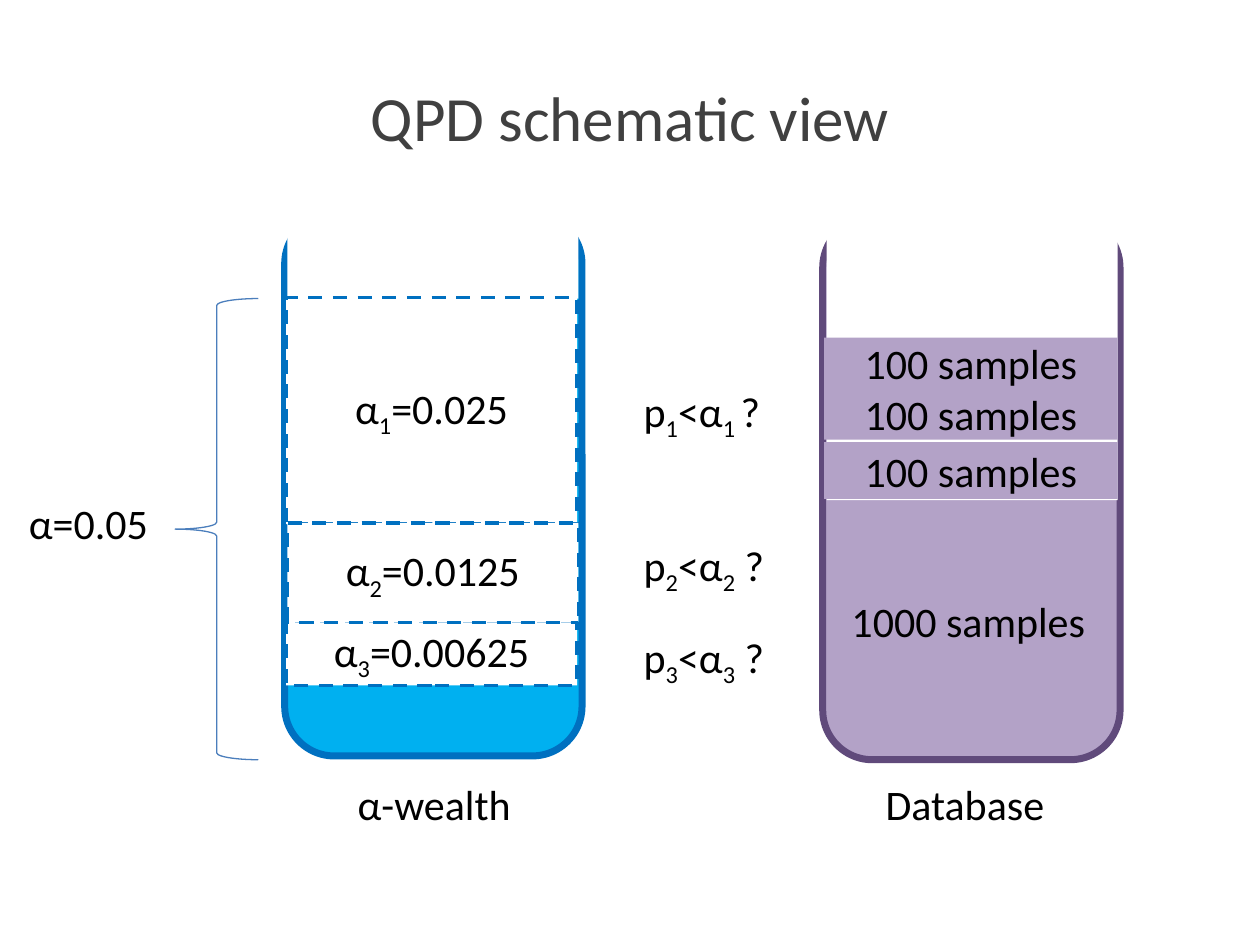
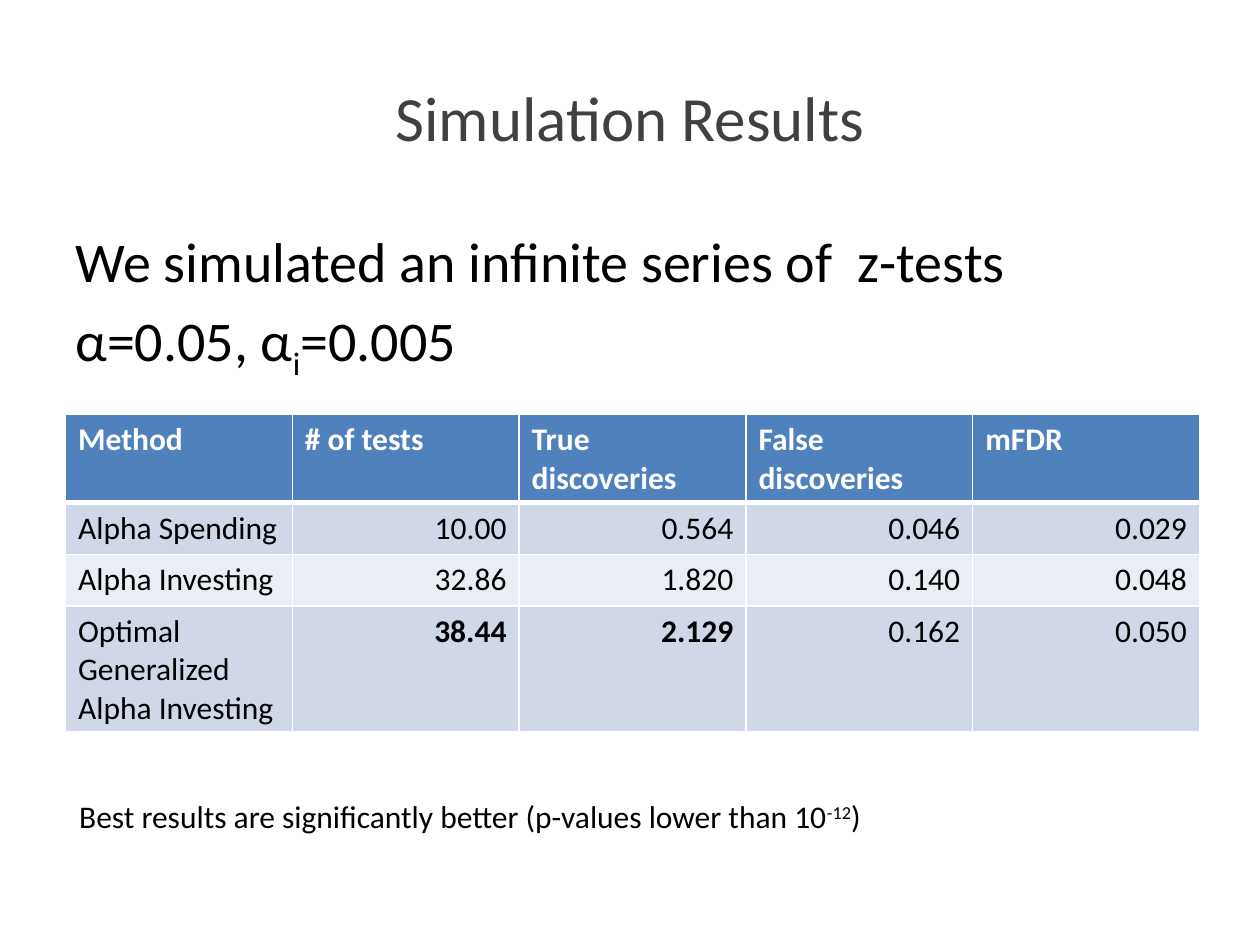
import dataclasses

import lxml.etree
import pptx
import pptx.dml.color
import pptx.enum.dml
import pptx.enum.shapes
import pptx.enum.text
import pptx.oxml.ns
import pptx.util

PX = 9144  # EMU per px: 100 px to the inch
SHAPES = pptx.enum.shapes.MSO_SHAPE
ALIGN = pptx.enum.text.PP_ALIGN
ANCHOR = pptx.enum.text.MSO_ANCHOR
AUTO_SIZE = pptx.enum.text.MSO_AUTO_SIZE
RGB = pptx.dml.color.RGBColor.from_string


@dataclasses.dataclass(frozen=True)
class Theme:
    font: str = "Calibri"
    title_size: int = 36
    body_size: int = 32
    label_size: int = 24
    table_size: int = 18
    title: str = "404040"
    text: str = "000000"
    white: str = "FFFFFF"
    wealth: str = "00B0F0"
    wealth_edge: str = "0070C0"
    brace: str = "4B7EBC"
    database: str = "B3A2C7"
    database_edge: str = "604A7B"
    header: str = "4F81BD"
    bands: tuple = ("D0D8E8", "E9EDF4")


THEME = Theme()


def write_text(paragraph, text, size, color=THEME.text, bold=False, align=ALIGN.LEFT, shift=-25):
    """Write text whose every second part between bars is a sub- or superscript."""
    paragraph.alignment = align
    font_format = {"name": THEME.font, "size": pptx.util.Pt(size), "bold": bold}
    for index, part in enumerate(text.split("|")):
        run = paragraph.add_run()
        run.text = part
        for name, value in font_format.items():
            setattr(run.font, name, value)
        run.font.color.rgb = RGB(color)
        if index % 2:
            run._r.get_or_add_rPr().set("baseline", str(shift * 1000))


def add_shape(slide, kind, box, fill=None, edge=None, width=1, dash=None, text=None):
    shape = slide.shapes.add_shape(kind, *(length * PX for length in box))
    shape.shadow.inherit = False
    if fill:
        shape.fill.solid()
        shape.fill.fore_color.rgb = RGB(fill)
    else:
        shape.fill.background()
    if edge:
        shape.line.color.rgb = RGB(edge)
        shape.line.width = pptx.util.Pt(width)
        shape.line.dash_style = dash
    else:
        shape.line.fill.background()
    if text:
        shape.text_frame.vertical_anchor = ANCHOR.MIDDLE
        write_text(shape.text_frame.paragraphs[0], text, THEME.label_size, align=ALIGN.CENTER)


presentation = pptx.Presentation()
presentation.slide_width = 1000 * PX
presentation.slide_height = 750 * PX

slides = []
for title in ("QPD schematic view", "Simulation Results"):
    slide = presentation.slides.add_slide(presentation.slide_layouts[6])
    frame = slide.shapes.add_textbox(50 * PX, 30 * PX, 900 * PX, 125 * PX).text_frame
    frame.word_wrap = True
    frame.vertical_anchor = ANCHOR.MIDDLE
    write_text(frame.paragraphs[0], title, THEME.title_size, THEME.title, align=ALIGN.CENTER)
    slides.append(slide)
schematic, results = slides

# Slide 1: two open vessels, each a rounded body with a white cover over its top
vessels = (
    ((226, 170, 236, 430), THEME.wealth, THEME.wealth_edge, (228, 138, 231, 99)),
    ((653, 173, 236, 430), THEME.database, THEME.database_edge, (656, 141, 231, 256)),
)
for body, fill, edge, cover in vessels:
    add_shape(schematic, SHAPES.ROUNDED_RECTANGLE, body, fill, edge, 4)
    add_shape(schematic, SHAPES.RECTANGLE, cover, THEME.white)

add_shape(schematic, SHAPES.LEFT_BRACE, (139, 237, 66, 366), edge=THEME.brace, width=0.75)

spent_levels = (
    (227, 236, 180, "α|1|=0.025"),
    (228, 415, 80, "α|2|=0.0125"),
    (227, 494, 50, "α|3|=0.00625"),
)
for left, top, height, text in spent_levels:
    add_shape(schematic, SHAPES.RECTANGLE, (left, top, 231, height), THEME.white,
              THEME.wealth_edge, 2, pptx.enum.dml.MSO_LINE.DASH, text)

for top, height in ((351, 45), (308, 41), (268, 40)):
    add_shape(schematic, SHAPES.RECTANGLE, (654, top, 233, height), THEME.database,
              text="100 samples")

labels = (
    (274, 613, 143, "α-wealth"),
    (13, 390, 115, "α=0.05"),
    (501, 301, 117, "p|1|<α|1 |?"),
    (501, 423, 120, "p|2|<α|2| ?"),
    (501, 496, 120, "p|3|<α|3| ?"),
    (666, 468, 207, "1000 samples"),
    (693, 613, 147, "Database"),
)
for left, top, width, text in labels:
    frame = schematic.shapes.add_textbox(left * PX, top * PX, width * PX, 51 * PX).text_frame
    frame.word_wrap = False
    frame.auto_size = AUTO_SIZE.SHAPE_TO_FIT_TEXT
    write_text(frame.paragraphs[0], text, THEME.label_size)

# Slide 2: results table, its footnote and the introduction
rows = (
    ("Method", "# of tests", "True discoveries", "False discoveries", "mFDR"),
    ("Alpha Spending", "10.00", "0.564", "0.046", "0.029"),
    ("Alpha Investing", "32.86", "1.820", "0.140", "0.048"),
    ("Optimal Generalized Alpha Investing", "38.44", "2.129", "0.162", "0.050"),
)
best_values = ("38.44", "2.129")
table = results.shapes.add_table(len(rows), len(rows[0]), 52 * PX, 329 * PX,
                                 900 * PX, 41 * len(rows) * PX).table
for row_index, row in enumerate(rows):
    is_header = row_index == 0
    fill = THEME.header if is_header else THEME.bands[(row_index - 1) % 2]
    edge_widths = {"lnL": 1, "lnR": 1, "lnT": 3 if row_index == 1 else 1,
                   "lnB": 3 if is_header else 1}
    for column_index, text in enumerate(row):
        cell = table.cell(row_index, column_index)
        write_text(cell.text_frame.paragraphs[0], text, THEME.table_size,
                   color=THEME.white if is_header else THEME.text,
                   bold=is_header or text in best_values,
                   align=ALIGN.LEFT if is_header or column_index == 0 else ALIGN.RIGHT)
        properties = cell._tc.get_or_add_tcPr()
        for tag, width in edge_widths.items():
            border = lxml.etree.SubElement(properties, pptx.oxml.ns.qn("a:" + tag),
                                           w=str(pptx.util.Pt(width)))
            solid = lxml.etree.SubElement(border, pptx.oxml.ns.qn("a:solidFill"))
            lxml.etree.SubElement(solid, pptx.oxml.ns.qn("a:srgbClr"), val=THEME.white)
        cell.fill.solid()
        cell.fill.fore_color.rgb = RGB(fill)

footnote = results.shapes.add_textbox(53 * PX, 628 * PX, 895 * PX, 40 * PX).text_frame
footnote.word_wrap = True
footnote.auto_size = AUTO_SIZE.SHAPE_TO_FIT_TEXT
write_text(footnote.paragraphs[0],
           "Best results are significantly better (p-values lower than 10|-12|)",
           THEME.table_size, shift=30)

introduction = results.shapes.add_textbox(50 * PX, 175 * PX, 900 * PX, 495 * PX).text_frame
introduction.word_wrap = True
introduction.add_paragraph()
introduction_lines = ("We simulated an infinite series of  z-tests", "α=0.05, α|i|=0.005")
for paragraph, text in zip(introduction.paragraphs, introduction_lines):
    paragraph.space_before = pptx.util.Pt(THEME.body_size * 0.2)
    write_text(paragraph, text, THEME.body_size)

presentation.save("out.pptx")
